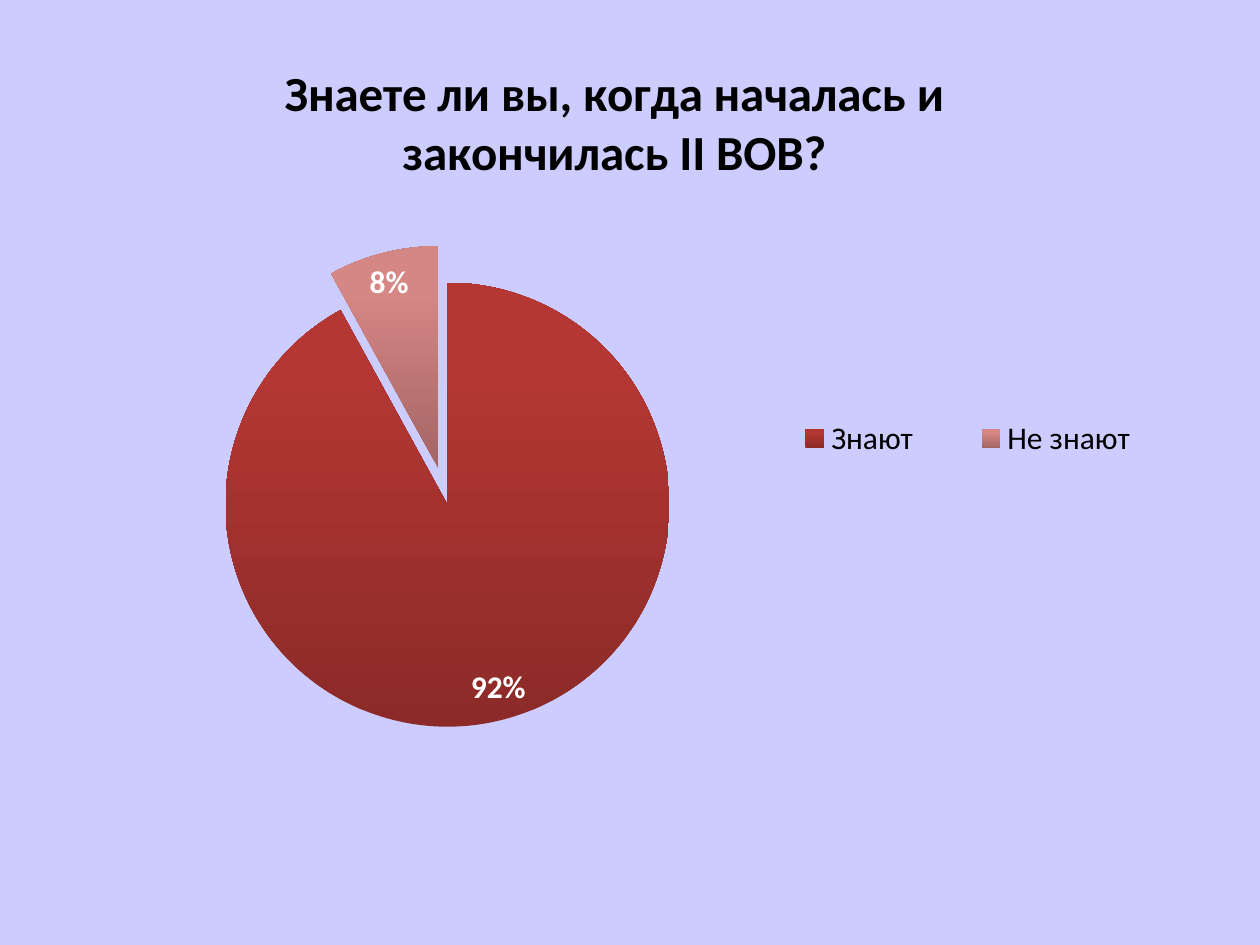
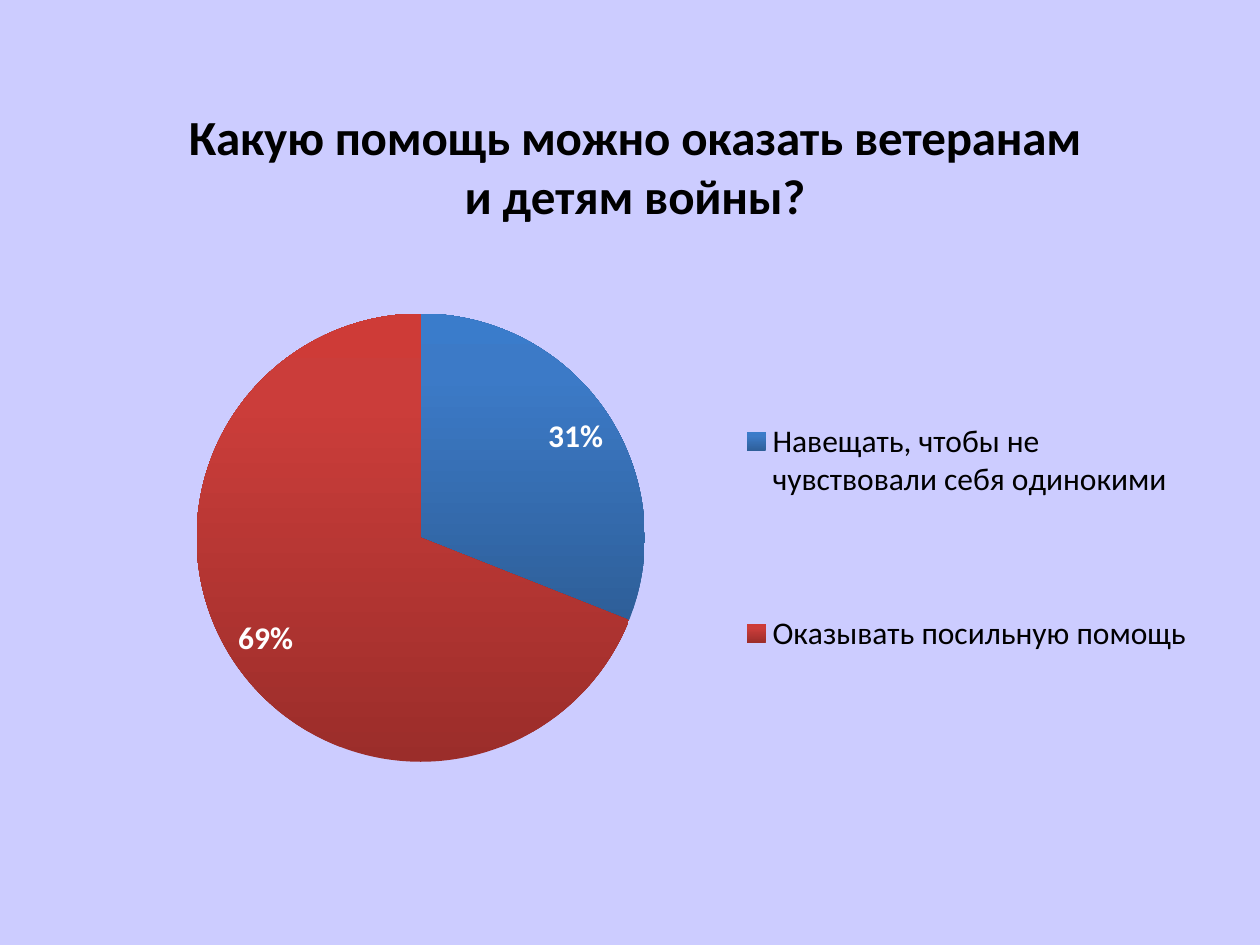
import copy
import dataclasses
import lxml.etree
import pptx
import pptx.chart.data
import pptx.dml.color
import pptx.enum.chart
import pptx.oxml.ns
import pptx.util

qn = pptx.oxml.ns.qn


@dataclasses.dataclass(frozen=True)
class Theme:
    wide: float = 10
    high: float = 7.5
    back: str = "CCCCFF"
    ink: str = "000000"
    light: str = "FFFFFF"
    face: str = "Calibri"
    head: int = 28
    body: int = 18
    blue: tuple = ("2E5F99", "3C7AC7", "3A7CCB")
    red: tuple = ("9B2D2A", "CB3D3A", "CE3B37")
    dark: tuple = ("8B2A28", "B43733", "B73531")
    pink: tuple = ("A46464", "D58785", "D78684")


class Deck:
    def __init__(self, theme):
        self.theme = theme
        self.file = pptx.Presentation()
        self.file.slide_width = pptx.util.Inches(theme.wide)
        self.file.slide_height = pptx.util.Inches(theme.high)
        self.slide = None

    def page(self):
        self.slide = self.file.slides.add_slide(self.file.slide_layouts[6])
        fill = self.slide.background.fill
        fill.solid()
        fill.fore_color.rgb = self.tone(self.theme.back)

    def tone(self, code):
        return pptx.dml.color.RGBColor.from_string(code)

    def style(self, font, size, code, bold):
        form = {"name": self.theme.face, "size": pptx.util.Pt(size), "bold": bold}
        for key, value in form.items():
            setattr(font, key, value)
        font.color.rgb = self.tone(code)

    def place(self, node, after, spot, inner=False):
        for old in node.findall(qn("c:layout")):
            node.remove(old)
        layout = lxml.etree.Element(qn("c:layout"))
        manual = lxml.etree.SubElement(layout, qn("c:manualLayout"))
        rules = [("layoutTarget", "inner")] if inner else []
        rules += [("xMode", "edge"), ("yMode", "edge")]
        rules += [(tag, round(share / 100, 4)) for tag, share in zip("xywh", spot)]
        for tag, value in rules:
            lxml.etree.SubElement(manual, qn(f"c:{tag}"), val=str(value))
        spots = [i for i, child in enumerate(node) if child.tag == qn(after)] if after else [-1]
        node.insert(spots[-1] + 1, layout)

    def shade(self, point, tones):
        fill = point.format.fill
        fill.gradient()
        fill.gradient_angle = 90
        stops = point.format.fill._xPr.find(qn("a:gradFill")).find(qn("a:gsLst"))
        model = copy.deepcopy(stops[0])
        for stop in list(stops):
            stops.remove(stop)
        for share, code in zip((0, 80, 100), tones):
            stop = copy.deepcopy(model)
            stop.set("pos", str(share * 1000))
            for child in list(stop):
                stop.remove(child)
            lxml.etree.SubElement(stop, qn("a:srgbClr"), val=code)
            stops.append(stop)

    def title(self, chart, text, spot):
        chart.has_title = True
        title = chart.chart_title
        title.text_frame.text = text
        run = title.text_frame.paragraphs[0].runs[0]
        self.style(run.font, self.theme.head, self.theme.ink, True)
        title.include_in_layout = False
        self.place(title._element, "c:tx", spot)

    def legend(self, chart, spot):
        chart.has_legend = True
        form = {
            "position": pptx.enum.chart.XL_LEGEND_POSITION.RIGHT,
            "include_in_layout": False,
        }
        for key, value in form.items():
            setattr(chart.legend, key, value)
        self.style(chart.legend.font, self.theme.body, self.theme.ink, False)
        self.place(chart.legend._element, "c:legendPos", spot)

    def labels(self, plot):
        plot.has_data_labels = True
        form = {
            "show_percentage": True,
            "show_value": False,
            "number_format": "0%",
            "number_format_is_linked": False,
            "position": pptx.enum.chart.XL_LABEL_POSITION.BEST_FIT,
        }
        for key, value in form.items():
            setattr(plot.data_labels, key, value)
        self.style(plot.data_labels.font, self.theme.body, self.theme.light, True)

    def pie(self, text, parts, box, head, disc, key, burst=0):
        data = pptx.chart.data.CategoryChartData()
        data.categories = [name for name, _, _ in parts]
        data.add_series(text, [value for _, value, _ in parts])
        sides = (self.file.slide_width, self.file.slide_height) * 2
        area = [int(share * side / 100) for share, side in zip(box, sides)]
        kind = pptx.enum.chart.XL_CHART_TYPE.PIE
        chart = self.slide.shapes.add_chart(kind, *area, data).chart
        self.style(chart.font, self.theme.body, self.theme.ink, False)
        self.title(chart, text, head)
        self.legend(chart, key)
        plot = chart.plots[0]
        plot.vary_by_categories = True
        self.labels(plot)
        self.place(plot._element.getparent(), None, disc, True)
        for i, (_, _, tones) in enumerate(parts):
            self.shade(plot.series[0].points[i], tones)
        if burst:
            point = plot.series[0]._element.findall(qn("c:dPt"))[-1]
            mark = lxml.etree.Element(qn("c:explosion"), val=str(burst))
            point.find(qn("c:spPr")).addprevious(mark)


def main():
    theme = Theme()
    deck = Deck(theme)
    deck.page()
    deck.pie(
        "Знаете ли вы, когда началась и закончилась II ВОВ?",
        [("Знают", 92, theme.dark), ("Не знают", 8, theme.pink)],
        box=(3.9, 5.2, 93, 87.5),
        head=(19.35, 0.15),
        disc=(15.05, 28.25, 37.9, 53.7),
        key=(59.6, 42.1, 37.6, 10),
        burst=17,
    )
    deck.page()
    deck.pie(
        "Какую помощь можно оказать ветеранам и детям войны?",
        [
            ("Навещать, чтобы не чувствовали себя одинокими", 31, theme.blue),
            ("Оказывать посильную помощь", 69, theme.red),
        ],
        box=(3.1, 9.1, 92.5, 73.2),
        head=(12.1, 1.25),
        disc=(13.5, 32.9, 38.5, 64.8),
        key=(60.7, 31.9, 38.4, 66.8),
    )
    deck.file.save("out.pptx")


if __name__ == "__main__":
    main()
